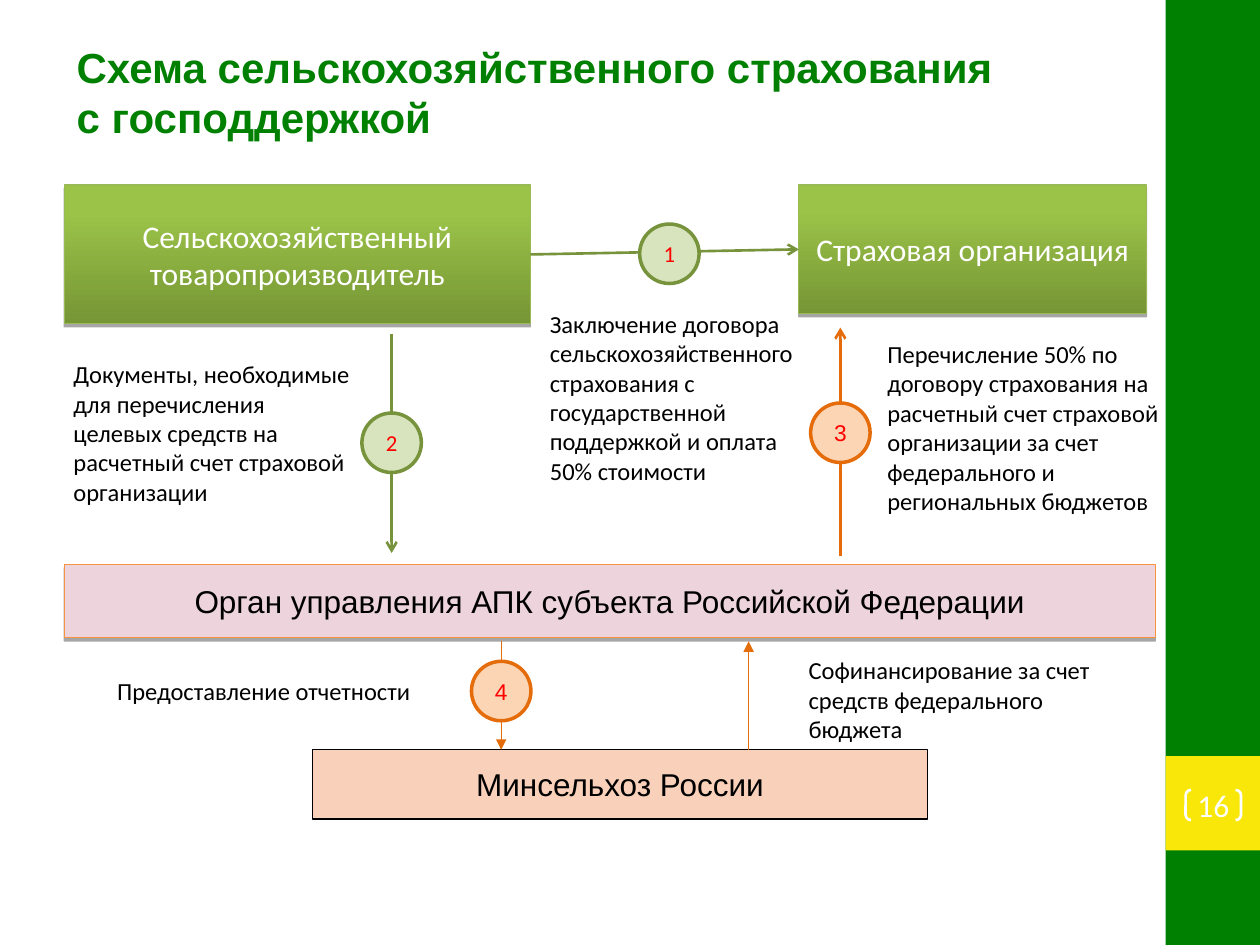
from dataclasses import dataclass

from lxml import etree
from pptx import Presentation
from pptx.dml.color import RGBColor
from pptx.enum.shapes import MSO_CONNECTOR, MSO_SHAPE
from pptx.enum.text import MSO_ANCHOR, MSO_AUTO_SIZE, PP_ALIGN
from pptx.oxml.ns import qn
from pptx.util import Pt

RECT = MSO_SHAPE.RECTANGLE
NODE = MSO_SHAPE.FLOWCHART_CONNECTOR
BRACKET = MSO_SHAPE.DOUBLE_BRACKET
STRAIGHT = MSO_CONNECTOR.STRAIGHT
CENTER, LEFT = PP_ALIGN.CENTER, PP_ALIGN.LEFT
MIDDLE, TOP = MSO_ANCHOR.MIDDLE, MSO_ANCHOR.TOP
GROW = MSO_AUTO_SIZE.SHAPE_TO_FIT_TEXT
RIGHT_SIDE, LEFT_SIDE = 3, 1
TIGHT, WIDE, NONE = (5.3, 2.9), (7.2, 3.6), (0, 0)


@dataclass(frozen=True)
class Theme:
    green: str = "008000"
    yellow: str = "F8E708"
    white: str = "FFFFFF"
    black: str = "000000"
    red: str = "FF0000"
    grass: tuple = ("769535", "9BC348")
    edge: str = "98B954"
    pink: str = "ECD3DC"
    amber: str = "F69240"
    rust: str = "EC5602"
    olive: tuple = ("77933C", "D7E4BD")
    orange: tuple = ("E46C0A", "FCD5B5")
    thin: str = "E56D09"
    head: float = 24
    name: float = 18
    note: float = 14
    mark: float = 13
    sans: str = "Arial"
    body: str = "Calibri"


T = Theme()


def rgb(code):
    return RGBColor.from_string(code)


def write(shape, text, size, font, color, align=CENTER, anchor=MIDDLE,
          pad=TIGHT, bold=False, wrap=True):
    frame = shape.text_frame
    frame.text = text
    frame.word_wrap = wrap
    frame.vertical_anchor = anchor
    frame.margin_left = frame.margin_right = Pt(pad[0])
    frame.margin_top = frame.margin_bottom = Pt(pad[1])
    for para in frame.paragraphs:
        para.alignment = align
        for run in para.runs:
            run.font.size = Pt(size)
            run.font.name = font
            run.font.bold = bold
            run.font.color.rgb = rgb(color)


def add_form(slide, kind, place, fill=None, edge=None, width=0.75):
    """Add a preset shape; a pair of fill colours runs from bottom to top."""
    form = slide.shapes.add_shape(kind, *map(Pt, place))
    form.shadow.inherit = False
    if fill is None:
        form.fill.background()
    elif isinstance(fill, tuple):
        form.fill.gradient()
        form.fill.gradient_angle = 90
        for stop, color, spot in zip(form.fill.gradient_stops, fill, (0, 0.8)):
            stop.color.rgb = rgb(color)
            stop.position = spot
    else:
        form.fill.solid()
        form.fill.fore_color.rgb = rgb(fill)
    if edge:
        form.line.color.rgb = rgb(edge)
        form.line.width = Pt(width)
    else:
        form.line.fill.background()
    return form


def set_alpha(color, share):
    etree.SubElement(color, qn("a:alpha"), val=str(share * 1000))


def drop_shade(form):
    """Give the shape a hard shadow just below it."""
    effects = form._element.spPr.find(qn("a:effectLst"))
    shade = etree.SubElement(effects, qn("a:outerShdw"), blurRad="0",
                             dist=str(Pt(1.8)), dir="5400000", rotWithShape="0")
    set_alpha(etree.SubElement(shade, qn("a:srgbClr"), val=T.black), 35)


def add_party(slide, place, text, fill, edge, font, color):
    box = add_form(slide, RECT, place, fill, edge)
    drop_shade(box)
    write(box, text, T.name, font, color)
    return box


def add_arrow(slide, start, end, color, width=1.5, tip="arrow"):
    arrow = slide.shapes.add_connector(STRAIGHT, *map(Pt, start + end))
    arrow.line.color.rgb = rgb(color)
    arrow.line.width = Pt(width)
    etree.SubElement(arrow.line._get_or_add_ln(), qn("a:tailEnd"), type=tip)
    etree.SubElement(arrow._element.spPr, qn("a:effectLst"))
    return arrow


def add_step(slide, number, center, tone, font):
    size = 34
    x, y = center
    node = add_form(slide, NODE, (x - size / 2, y - size / 2, size, size),
                    tone[1], tone[0], 2)
    write(node, number, T.mark, font, T.red)


def add_note(slide, place, text, pad=TIGHT, size=T.note, font=T.body,
             color=T.black, bold=False, wrap=True):
    note = slide.shapes.add_textbox(*map(Pt, place))
    write(note, text, size, font, color, LEFT, TOP, pad, bold, wrap)
    note.text_frame.auto_size = GROW


def add_frame(slide):
    """Draw the side band, the page number and the title."""
    add_form(slide, RECT, (666, 0, 54, 540), T.green)
    add_form(slide, RECT, (666, 432, 54, 54), T.yellow)
    page = add_form(slide, BRACKET, (677.5, 451.4, 31.7, 17.3),
                    edge=T.white, width=1.5)
    page.adjustments[0] = 0.18
    write(page, "16", T.name, T.body, T.white, pad=NONE)
    add_note(slide, (36.7, 20.2, 612.7, 64.8),
             "Схема сельскохозяйственного страхования\nс господдержкой",
             WIDE, T.head, T.sans, T.green, bold=True)


def add_parties(slide):
    farm = add_party(slide, (36.7, 105.8, 266.4, 79.2),
                     "Сельскохозяйственный товаропроизводитель",
                     T.grass, T.edge, T.body, T.white)
    insurer = add_party(slide, (456.5, 105.8, 198.7, 73.4),
                        "Страховая организация",
                        T.grass, T.edge, T.body, T.white)
    add_party(slide, (36.7, 322.6, 623.5, 41.8),
              "Орган управления АПК субъекта Российской Федерации",
              T.pink, T.amber, T.sans, T.black)
    state = add_form(slide, RECT, (178.6, 428.4, 351.4, 39.6), T.rust, T.black)
    set_alpha(state.fill._xPr.find(qn("a:solidFill"))[0], 27)
    write(state, "Минсельхоз России", T.name, T.sans, T.black, wrap=False)
    return farm, insurer


def add_flows(slide, farm, insurer):
    deal = add_arrow(slide, (303.1, 145.4), (456.5, 142.5), T.olive[0])
    deal.begin_connect(farm, RIGHT_SIDE)
    deal.end_connect(insurer, LEFT_SIDE)
    add_arrow(slide, (223.8, 190.8), (223.8, 316), T.olive[0])
    add_arrow(slide, (480.2, 317.5), (480.2, 187.2), T.orange[0])
    for x, start, end in ((286.4, 366.5, 428.4), (427.8, 428.4, 366.5)):
        add_arrow(slide, (x, start), (x, end), T.thin, 0.75, "triangle")
    add_step(slide, "1", (382.5, 145), T.olive, T.body)
    add_step(slide, "2", (223.8, 253), T.olive, T.body)
    add_step(slide, "3", (480.2, 247.3), T.orange, T.sans)
    add_step(slide, "4", (286.4, 394.9), T.orange, T.sans)


def add_notes(slide):
    add_note(slide, (36.7, 202.3, 175.7, 90),
             "Документы, необходимые для перечисления\n"
             "целевых средств на расчетный счет страховой организации")
    add_note(slide, (308.9, 173.5, 154, 107.3),
             "Заключение договора сельскохозяйственного страхования с "
             "государственной поддержкой и оплата 50% стоимости")
    add_note(slide, (501.8, 190.8, 175.7, 107.3),
             "Перечисление 50% по договору страхования на расчетный счет "
             "страховой организации за счет федерального и региональных "
             "бюджетов")
    add_note(slide, (455, 370.8, 204.5, 58.3),
             "Софинансирование за счет средств федерального бюджета", WIDE)
    add_note(slide, (59.8, 383, 183.6, 24.5),
             "Предоставление отчетности", WIDE, wrap=False)


def main():
    deck = Presentation()
    deck.slide_width, deck.slide_height = Pt(720), Pt(540)
    slide = deck.slides.add_slide(deck.slide_layouts[6])
    add_frame(slide)
    farm, insurer = add_parties(slide)
    add_flows(slide, farm, insurer)
    add_notes(slide)
    deck.save("out.pptx")


if __name__ == "__main__":
    main()
